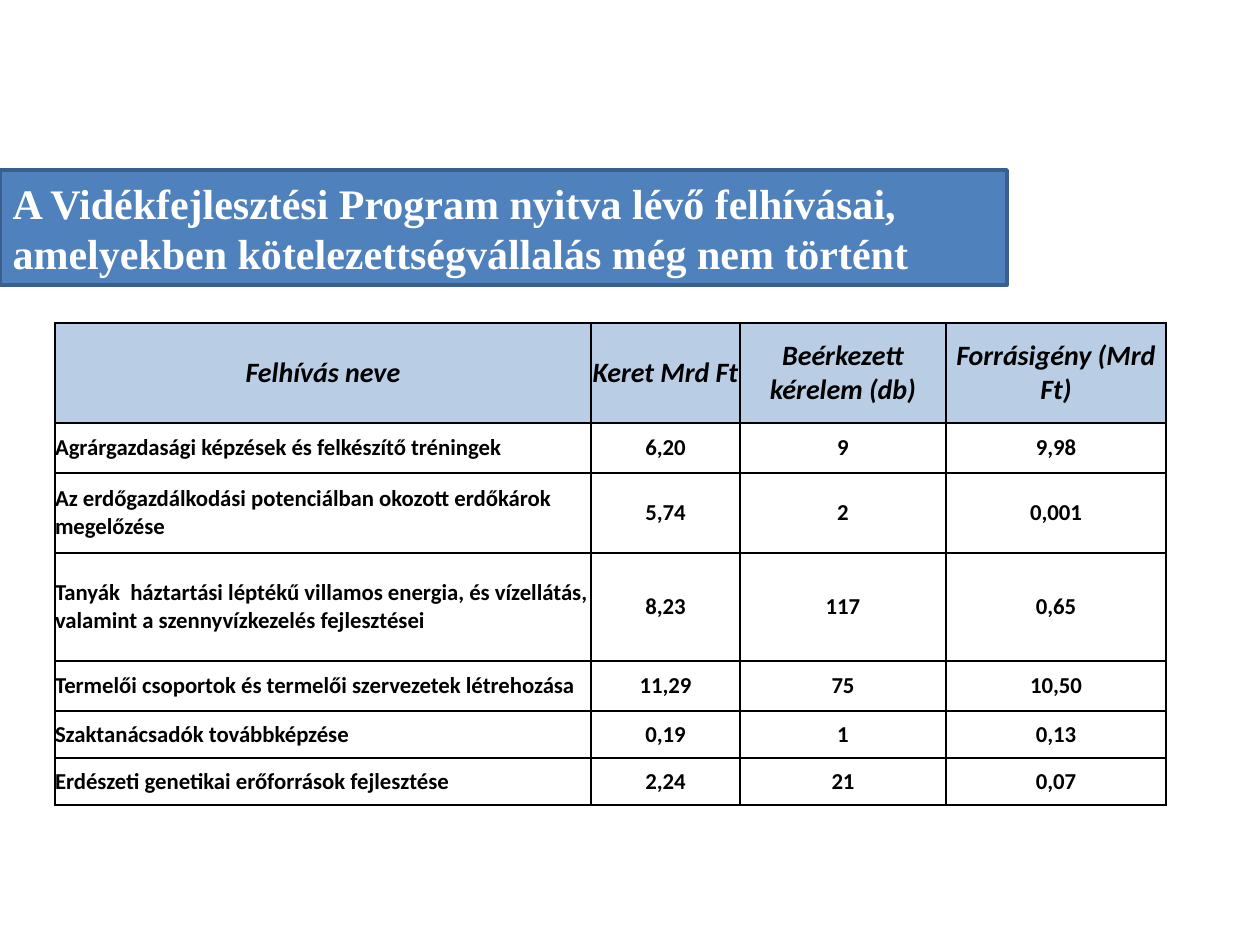
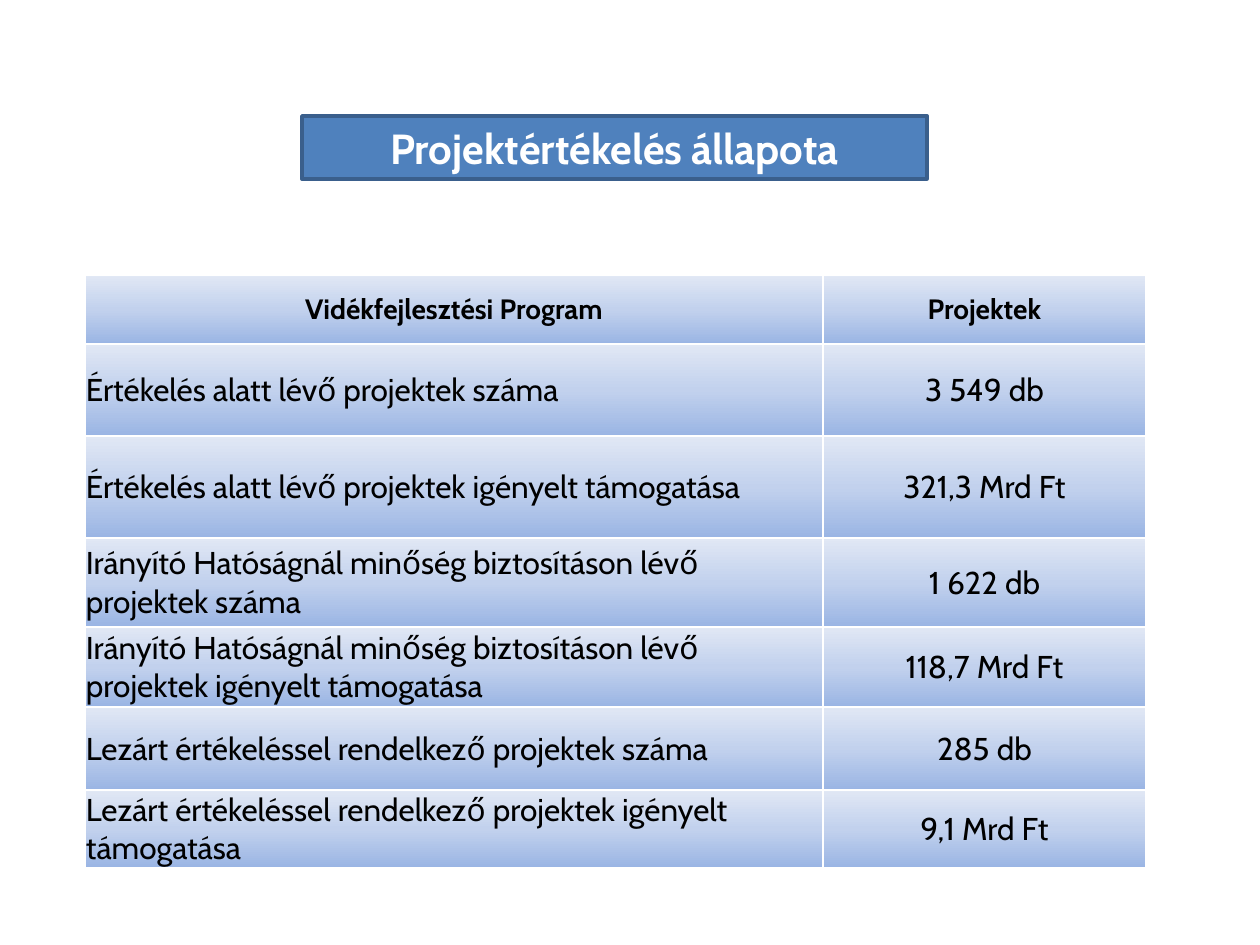
from dataclasses import dataclass

from lxml.etree import SubElement
from pptx import Presentation
from pptx.dml.color import RGBColor
from pptx.enum.text import MSO_ANCHOR, MSO_AUTO_SIZE, PP_ALIGN
from pptx.oxml.ns import qn
from pptx.util import Emu, Pt

PX = 914400 / 126  # EMU in one pixel


@dataclass(frozen=True)
class Theme:
    band: str = "4F81BD"
    band_line: str = "3A5F8C"
    band_text: str = "FFFFFF"
    band_line_width: int = 2
    title_size: int = 24
    text: str = "000000"
    header_size: int = 16
    border_width: int = 1


THEME = Theme()
BLUE_GRADIENT = ((0, "9AB5E4"), (50, "C2D1ED"), (100, "E1E8F5"))

# Content: places are (left, top, width, height) in px
OPEN_CALLS = {
    "title": "A Vidékfejlesztési Program nyitva lévő felhívásai, "
             "amelyekben kötelezettségvállalás még nem történt",
    "title_place": (0, 170, 1007, 115),
    "title_font": "Times New Roman",
    "title_align": PP_ALIGN.LEFT,
    "table_origin": (55, 323),
    "columns": (536, 149, 206, 220),
    "row_heights": (100, 50, 80, 108, 50, 47, 47),
    "font": "Calibri",
    "body_size": 13,
    "body_bold": True,
    "header_italic": True,
    "header_fill": "B9CDE5",
    "body_fill": "FFFFFF",
    "border": "000000",
    "margins": (0, 0, 0, 0),
    "rows": [
        ("Felhívás neve", "Keret Mrd Ft", "Beérkezett kérelem (db)", "Forrásigény (Mrd Ft)"),
        ("Agrárgazdasági képzések és felkészítő tréningek", "6,20", "9", "9,98"),
        ("Az erdőgazdálkodási potenciálban okozott erdőkárok megelőzése", "5,74", "2", "0,001"),
        ("Tanyák  háztartási léptékű villamos energia, és vízellátás, "
         "valamint a szennyvízkezelés fejlesztései", "8,23", "117", "0,65"),
        ("Termelői csoportok és termelői szervezetek létrehozása", "11,29", "75", "10,50"),
        ("Szaktanácsadók továbbképzése", "0,19", "1", "0,13"),
        ("Erdészeti genetikai erőforrások fejlesztése", "2,24", "21", "0,07"),
    ],
}

EVALUATION = {
    "title": "Projektértékelés állapota",
    "title_place": (302, 116, 625, 63),
    "title_font": "Cabin",
    "title_align": PP_ALIGN.CENTER,
    "table_origin": (85, 275),
    "columns": (738, 323),
    "row_heights": (69, 92, 102, 89, 80, 83, 72),
    "font": "Cabin",
    "body_size": 18,
    "body_bold": False,
    "header_italic": False,
    "header_fill": BLUE_GRADIENT,
    "body_fill": BLUE_GRADIENT,
    "border": "FFFFFF",
    "margins": (1, 1, 1, 0),
    "rows": [
        ("Vidékfejlesztési Program", "Projektek"),
        ("Értékelés alatt lévő projektek száma", "3 549 db"),
        ("Értékelés alatt lévő projektek igényelt támogatása", "321,3 Mrd Ft"),
        ("Irányító Hatóságnál minőség biztosításon lévő projektek száma", "1 622 db"),
        ("Irányító Hatóságnál minőség biztosításon lévő projektek igényelt támogatása",
         "118,7 Mrd Ft"),
        ("Lezárt értékeléssel rendelkező projektek száma", "285 db"),
        ("Lezárt értékeléssel rendelkező projektek igényelt támogatása", "9,1 Mrd Ft"),
    ],
}


def px(length):
    return Emu(round(length * PX))


def set_font(paragraph, name, size, color, bold, italic=False):
    font = paragraph.font
    font.name, font.size, font.bold, font.italic = name, Pt(size), bold, italic
    font.color.rgb = RGBColor.from_string(color)


def add_color(parent, color):
    SubElement(parent, qn("a:srgbClr"), val=color)


def add_borders(cell, color):
    properties = cell._tc.get_or_add_tcPr()
    for side in ("lnL", "lnR", "lnT", "lnB"):
        border = SubElement(properties, qn(f"a:{side}"), w=str(Pt(THEME.border_width)))
        add_color(SubElement(border, qn("a:solidFill")), color)


def fill_cell(cell, fill):
    if isinstance(fill, str):
        cell.fill.solid()
        cell.fill.fore_color.rgb = RGBColor.from_string(fill)
        return
    gradient = SubElement(cell._tc.get_or_add_tcPr(), qn("a:gradFill"), rotWithShape="1")
    stops = SubElement(gradient, qn("a:gsLst"))
    for percent, color in fill:
        add_color(SubElement(stops, qn("a:gs"), pos=str(percent * 1000)), color)
    SubElement(gradient, qn("a:lin"), ang=str(270 * 60000), scaled="0")


def add_title_band(slide, content):
    band = slide.shapes.title
    band.left, band.top, band.width, band.height = map(px, content["title_place"])
    band.fill.solid()
    band.fill.fore_color.rgb = RGBColor.from_string(THEME.band)
    band.line.color.rgb = RGBColor.from_string(THEME.band_line)
    band.line.width = Pt(THEME.band_line_width)
    frame = band.text_frame
    frame.text = content["title"]
    frame.word_wrap = True
    frame.auto_size = MSO_AUTO_SIZE.NONE
    frame.vertical_anchor = MSO_ANCHOR.MIDDLE
    paragraph = frame.paragraphs[0]
    paragraph.alignment = content["title_align"]
    set_font(paragraph, content["title_font"], THEME.title_size, THEME.band_text, True)


def add_content_table(slide, content):
    rows, columns, heights = content["rows"], content["columns"], content["row_heights"]
    table = slide.shapes.add_table(
        len(rows), len(columns), *map(px, content["table_origin"]),
        px(sum(columns)), px(sum(heights))).table
    for column, width in zip(table.columns, columns):
        column.width = px(width)
    for row, height in zip(table.rows, heights):
        row.height = px(height)

    for row_index, texts in enumerate(rows):
        header = row_index == 0
        for column_index, text in enumerate(texts):
            cell = table.cell(row_index, column_index)
            cell.text = text
            cell.vertical_anchor = MSO_ANCHOR.MIDDLE
            (cell.margin_left, cell.margin_top,
             cell.margin_right, cell.margin_bottom) = map(px, content["margins"])
            add_borders(cell, content["border"])
            fill_cell(cell, content["header_fill" if header else "body_fill"])
            paragraph = cell.text_frame.paragraphs[0]
            centred = header or column_index > 0
            paragraph.alignment = PP_ALIGN.CENTER if centred else PP_ALIGN.LEFT
            set_font(paragraph, content["font"],
                     THEME.header_size if header else content["body_size"],
                     THEME.text, header or content["body_bold"],
                     header and content["header_italic"])


def main():
    deck = Presentation()
    deck.slide_width, deck.slide_height = px(1260), px(945)
    title_only = deck.slide_layouts[5]
    for content in (OPEN_CALLS, EVALUATION):
        slide = deck.slides.add_slide(title_only)
        add_title_band(slide, content)
        add_content_table(slide, content)
    deck.save("out.pptx")


if __name__ == "__main__":
    main()
